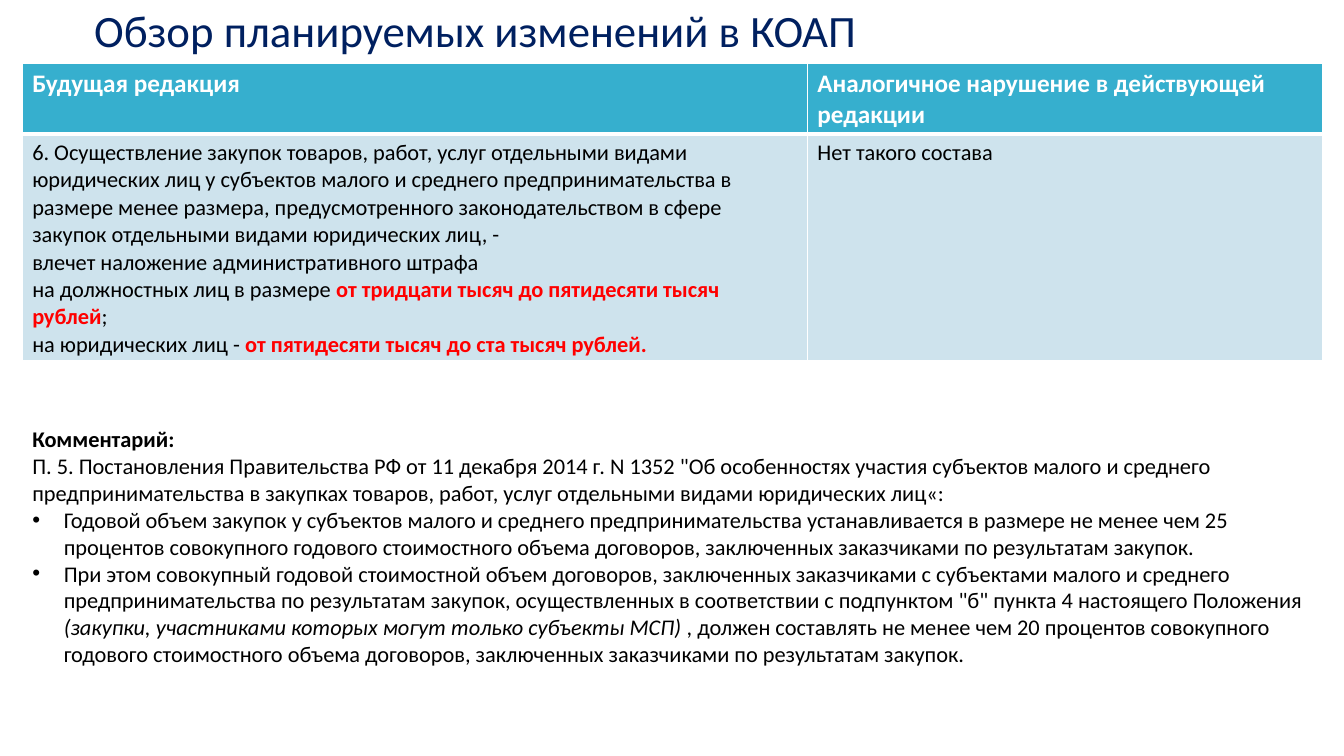
"""Builds the slide on planned changes to the administrative code."""
from lxml.etree import SubElement
from pptx import Presentation
from pptx.dml.color import RGBColor
from pptx.enum.text import MSO_ANCHOR as Anchor, MSO_AUTO_SIZE as AutoSize, PP_ALIGN as Align
from pptx.oxml.ns import qn
from pptx.util import Pt

NAVY = RGBColor(0x00, 0x20, 0x60)
TEAL = RGBColor(0x36, 0xAF, 0xCE)
PALE_BLUE = RGBColor(0xCE, 0xE3, 0xED)
WHITE = RGBColor(0xFF, 0xFF, 0xFF)
BLACK = RGBColor(0x00, 0x00, 0x00)
RED = RGBColor(0xFF, 0x00, 0x00)

FONT = "Calibri"
TABLE_LEFT = 15.84
COLUMN_WIDTHS = (560.88, 367.92)
ROW_HEIGHTS = (50.4, 162)
HEADERS = ("Будущая редакция", "Аналогичное нарушение в действующей редакции")
FUTURE_WORDING = (
    (("6. Осуществление закупок товаров, работ, услуг отдельными видами юридических лиц "
      "у субъектов малого и среднего предпринимательства в размере менее размера, "
      "предусмотренного законодательством в сфере закупок отдельными видами "
      "юридических лиц, -", {}),),
    (("влечет наложение административного штрафа", {}),),
    (("на должностных лиц в размере ", {}),
     ("от тридцати тысяч до пятидесяти тысяч рублей", {"color": RED, "bold": True}),
     (";", {})),
    (("на юридических лиц - ", {}),
     ("от пятидесяти тысяч до ста тысяч рублей.", {"color": RED, "bold": True})),
)
CURRENT_WORDING = ((("Нет такого состава", {}),),)
COMMENT_INTRO = (
    (("Комментарий:", {"bold": True}),),
    (('П. 5. Постановления Правительства РФ от 11 декабря 2014 г. N 1352 "Об особенностях '
      "участия субъектов малого и среднего предпринимательства в закупках товаров, работ, "
      "услуг отдельными видами юридических лиц«:", {}),),
)
COMMENT_BULLETS = (
    (("Годовой объем закупок у субъектов малого и среднего предпринимательства "
      "устанавливается в размере не менее чем 25 процентов совокупного годового "
      "стоимостного объема договоров, заключенных заказчиками по результатам закупок.", {}),),
    (("При этом совокупный годовой стоимостной объем договоров, заключенных заказчиками "
      "с субъектами малого и среднего предпринимательства по результатам закупок, "
      'осуществленных в соответствии с подпунктом "б" пункта 4 настоящего Положения ', {}),
     ("(закупки, участниками которых могут только субъекты МСП) ", {"italic": True}),
     (", должен составлять не менее чем 20 процентов совокупного годового стоимостного "
      "объема договоров, заключенных заказчиками по результатам закупок.", {})),
)


def place(shape, left, top, width, height):
    shape.left, shape.top, shape.width, shape.height = map(Pt, (left, top, width, height))


def add_run(paragraph, text, size=16, color=BLACK, bold=False, italic=False):
    run = paragraph.add_run()
    run.text = text
    font = run.font
    font.name, font.size, font.bold, font.italic = FONT, Pt(size), bold, italic
    font.color.rgb = color


def write_paragraphs(frame, paragraphs):
    """Fills a text frame and returns its paragraphs."""
    for index, runs in enumerate(paragraphs):
        paragraph = frame.paragraphs[0] if index == 0 else frame.add_paragraph()
        paragraph.alignment = Align.LEFT
        paragraph.space_before = Pt(0)
        for text, style in runs:
            add_run(paragraph, text, **style)
    return frame.paragraphs


def set_bullet(paragraph, bulleted):
    indent = Pt(22.5) if bulleted else 0
    properties = paragraph._p.get_or_add_pPr()
    properties.set("marL", str(indent))
    properties.set("indent", str(-indent))
    if bulleted:
        SubElement(properties, qn("a:buFont"), typeface="Arial")
        SubElement(properties, qn("a:buChar"), char="•")
    else:
        SubElement(properties, qn("a:buNone"))


def set_borders(cell, **widths):
    properties = cell._tc.get_or_add_tcPr()
    for side in "LRTB":
        line = SubElement(properties, qn(f"a:ln{side}"), w=str(Pt(widths.get(side, 1))))
        fill = SubElement(line, qn("a:solidFill"))
        SubElement(fill, qn("a:srgbClr"), val=str(WHITE))


def fill_cell(cell, paragraphs, color, **border_widths):
    write_paragraphs(cell.text_frame, paragraphs)
    set_borders(cell, **border_widths)
    cell.fill.solid()
    cell.fill.fore_color.rgb = color


def add_title(slide, text):
    title = slide.shapes.title
    place(title, 60, 1.44, 828, 43.92)
    frame = title.text_frame
    frame.vertical_anchor = Anchor.MIDDLE
    frame.auto_size = AutoSize.NONE
    paragraph = write_paragraphs(frame, [[(text, {"size": 32, "color": NAVY})]])[0]
    paragraph.line_spacing = 0.9


def add_comparison(slide):
    frame = slide.shapes.add_table(2, 2, Pt(TABLE_LEFT), Pt(45.36),
                                   Pt(sum(COLUMN_WIDTHS)), Pt(sum(ROW_HEIGHTS)))
    table = frame.table
    for column, width in zip(table.columns, COLUMN_WIDTHS):
        column.width = Pt(width)
    for row, height in zip(table.rows, ROW_HEIGHTS):
        row.height = Pt(height)
    header_style = {"size": 18, "color": WHITE, "bold": True}
    for index, (header, wording) in enumerate(zip(HEADERS, (FUTURE_WORDING, CURRENT_WORDING))):
        fill_cell(table.cell(0, index), [[(header, header_style)]], TEAL, B=3)
        fill_cell(table.cell(1, index), wording, PALE_BLUE, T=3)


def add_comment(slide):
    body = slide.placeholders[1]
    place(body, TABLE_LEFT, 300.24, sum(COLUMN_WIDTHS), 181.44)
    frame = body.text_frame
    frame.word_wrap = True
    frame.auto_size = AutoSize.SHAPE_TO_FIT_TEXT
    paragraphs = write_paragraphs(frame, COMMENT_INTRO + COMMENT_BULLETS)
    for index, paragraph in enumerate(paragraphs):
        set_bullet(paragraph, index >= len(COMMENT_INTRO))


def main():
    presentation = Presentation()
    presentation.slide_width, presentation.slide_height = Pt(960), Pt(540)
    slide = presentation.slides.add_slide(presentation.slide_layouts[1])
    add_title(slide, "Обзор планируемых изменений в КОАП")
    add_comparison(slide)
    add_comment(slide)
    presentation.save("out.pptx")


if __name__ == "__main__":
    main()
